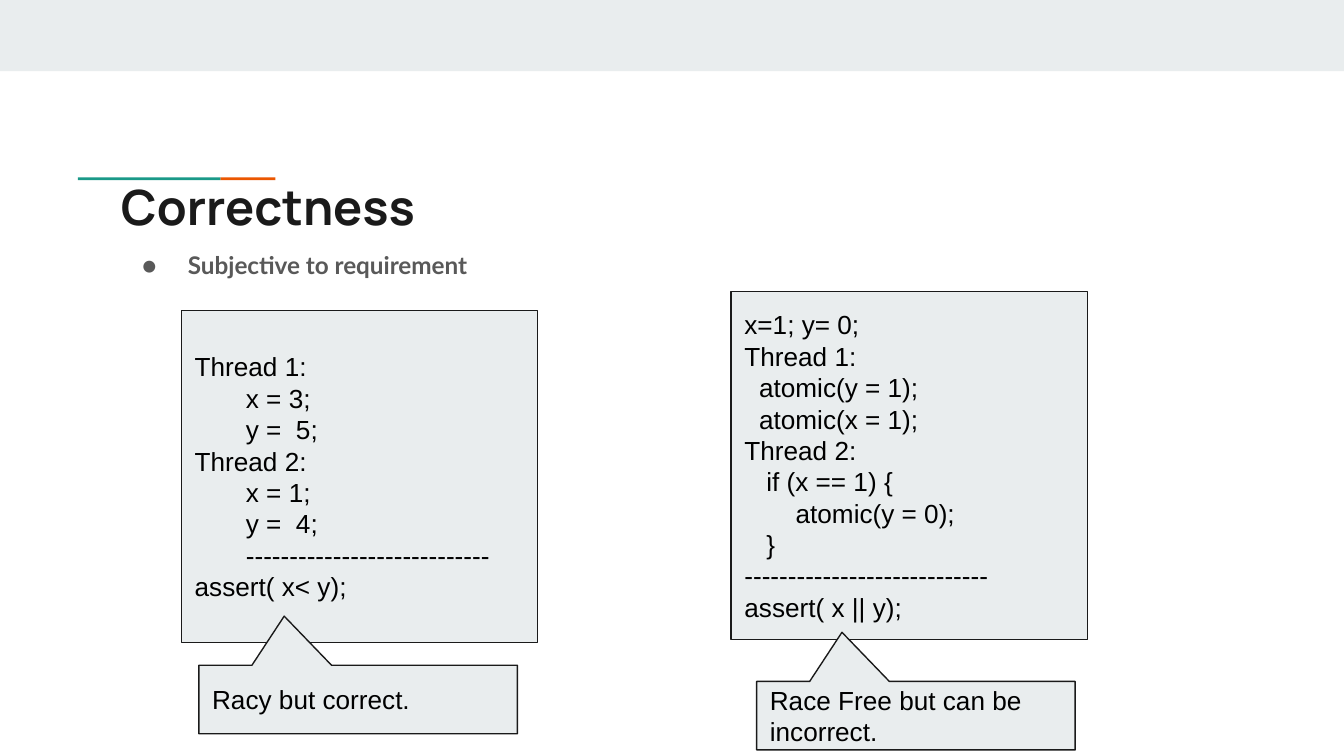
from dataclasses import dataclass

from lxml.etree import SubElement
from pptx import Presentation
from pptx.dml.color import RGBColor
from pptx.enum.shapes import MSO_SHAPE
from pptx.enum.text import MSO_ANCHOR, MSO_AUTO_SIZE, PP_ALIGN
from pptx.oxml.ns import qn
from pptx.util import Inches, Pt

COLORS = {
    "panel": "E9EDEE",
    "orange": "EB5600",
    "teal": "1A9988",
    "ink": "1A1A1A",
    "gray": "595959",
    "black": "000000",
}
STYLES = {
    "title": {"name": "Manrope", "size": Pt(26), "bold": True},
    "bullet": {"name": "Lato", "size": Pt(13), "bold": True},
    "code": {"name": "Arial", "size": Pt(14), "bold": False},
}
SPACE_WIDTH = Pt(14) * 0.28  # one Arial space at 14 pt
DASHES = "-" * 28


@dataclass
class Box:
    left: float
    top: float
    width: float
    height: float

    def lengths(self):
        return [Inches(v) for v in (self.left, self.top, self.width, self.height)]


@dataclass
class Line:
    text: str
    indent: int = 0  # first-line indent in space widths


@dataclass
class Example:
    code_box: Box
    code: list[Line]
    verdict_box: Box
    verdict: str


EXAMPLES = [
    Example(
        Box(1.35, 2.31, 2.65, 2.47),
        [
            Line("Thread 1:"),
            Line("x = 3;", 7),
            Line("y =  5;", 7),
            Line("Thread 2:"),
            Line("x = 1;", 7),
            Line("y =  4;", 7),
            Line(DASHES, 7),
            Line("assert( x< y);"),
        ],
        Box(1.48, 4.95, 2.37, 0.51),
        "Racy but correct.",
    ),
    Example(
        Box(5.44, 2.17, 2.65, 2.59),
        [
            Line("x=1; y= 0;"),
            Line("Thread 1:"),
            Line("atomic(y = 1);", 2),
            Line("atomic(x = 1);", 2),
            Line("Thread 2:"),
            Line("if (x == 1) {", 3),
            Line("atomic(y = 0);", 7),
            Line("}\n" + DASHES, 3),
            Line("assert( x || y);"),
        ],
        Box(5.63, 5.07, 2.37, 0.51),
        "Race Free but can be incorrect.",
    ),
]


def rgb(name: str) -> RGBColor:
    return RGBColor.from_string(COLORS[name])


def write_lines(shape, lines: list[Line], style: str, color: str, anchor) -> None:
    frame = shape.text_frame
    frame_format = {
        "word_wrap": True,
        "auto_size": MSO_AUTO_SIZE.NONE,
        "vertical_anchor": anchor,
        **{f"margin_{side}": Inches(0.1) for side in ("left", "top", "right", "bottom")},
    }
    for key, value in frame_format.items():
        setattr(frame, key, value)
    for index, line in enumerate(lines):
        paragraph = frame.paragraphs[0] if index == 0 else frame.add_paragraph()
        paragraph.alignment = PP_ALIGN.LEFT
        if line.indent:
            properties = paragraph._p.get_or_add_pPr()
            properties.set("marL", "0")
            properties.set("indent", str(round(line.indent * SPACE_WIDTH)))
        for part, text in enumerate(line.text.split("\n")):
            if part:
                paragraph.add_line_break()
            run = paragraph.add_run()
            run.text = text
            for key, value in STYLES[style].items():
                setattr(run.font, key, value)
            run.font.color.rgb = rgb(color)


def add_block(slide, kind, box: Box, fill: str, outlined: bool = False):
    shape = slide.shapes.add_shape(kind, *box.lengths())
    shape.shadow.inherit = False
    shape.fill.solid()
    shape.fill.fore_color.rgb = rgb(fill)
    if outlined:
        shape.line.color.rgb = rgb("ink")
        shape.line.width = Pt(0.75)
    else:
        shape.line.fill.background()
    return shape


def add_bullet(paragraph, color: str) -> None:
    properties = paragraph._p.get_or_add_pPr()
    properties.set("marL", str(Inches(0.5)))
    properties.set("indent", str(Inches(-0.34)))
    bullet_color = SubElement(properties, qn("a:buClr"))
    SubElement(bullet_color, qn("a:srgbClr")).set("val", COLORS[color])
    SubElement(properties, qn("a:buSzPts")).set("val", "1300")
    SubElement(properties, qn("a:buFont")).set("typeface", "Lato")
    SubElement(properties, qn("a:buChar")).set("char", "●")


def add_example(slide, example: Example) -> None:
    panel = add_block(slide, MSO_SHAPE.RECTANGLE, example.code_box, "panel", True)
    write_lines(panel, example.code, "code", "black", MSO_ANCHOR.MIDDLE)
    callout = add_block(
        slide, MSO_SHAPE.ROUNDED_RECTANGULAR_CALLOUT, example.verdict_box, "panel", True
    )
    for index, value in enumerate((-0.232, -1.217, 0)):
        callout.adjustments[index] = value
    write_lines(callout, [Line(example.verdict)], "code", "black", MSO_ANCHOR.MIDDLE)


def main() -> None:
    presentation = Presentation()
    presentation.slide_width = Inches(10)
    presentation.slide_height = Inches(10) * 9 // 16
    slide = presentation.slides.add_slide(presentation.slide_layouts[5])

    # Top band and two-colour accent rule
    add_block(slide, MSO_SHAPE.RECTANGLE, Box(0, 0, 10, 0.53), "panel")
    add_block(slide, MSO_SHAPE.RECTANGLE, Box(1.64, 1.32, 0.41, 0.02), "orange")
    add_block(slide, MSO_SHAPE.RECTANGLE, Box(0.58, 1.32, 1.06, 0.02), "teal")

    # Title
    title = slide.shapes.title
    title.left, title.top, title.width, title.height = Box(0.8, 1.22, 8.41, 0.59).lengths()
    write_lines(title, [Line("Correctness")], "title", "ink", MSO_ANCHOR.TOP)

    # Bullet
    body = slide.shapes.add_textbox(*Box(0.8, 1.73, 8.41, 2.72).lengths())
    write_lines(body, [Line("Subjective to requirement")], "bullet", "gray", MSO_ANCHOR.TOP)
    paragraph = body.text_frame.paragraphs[0]
    paragraph.line_spacing = 1.15
    add_bullet(paragraph, "gray")

    # Code examples with their verdicts
    for example in EXAMPLES:
        add_example(slide, example)

    presentation.save("out.pptx")


if __name__ == "__main__":
    main()
